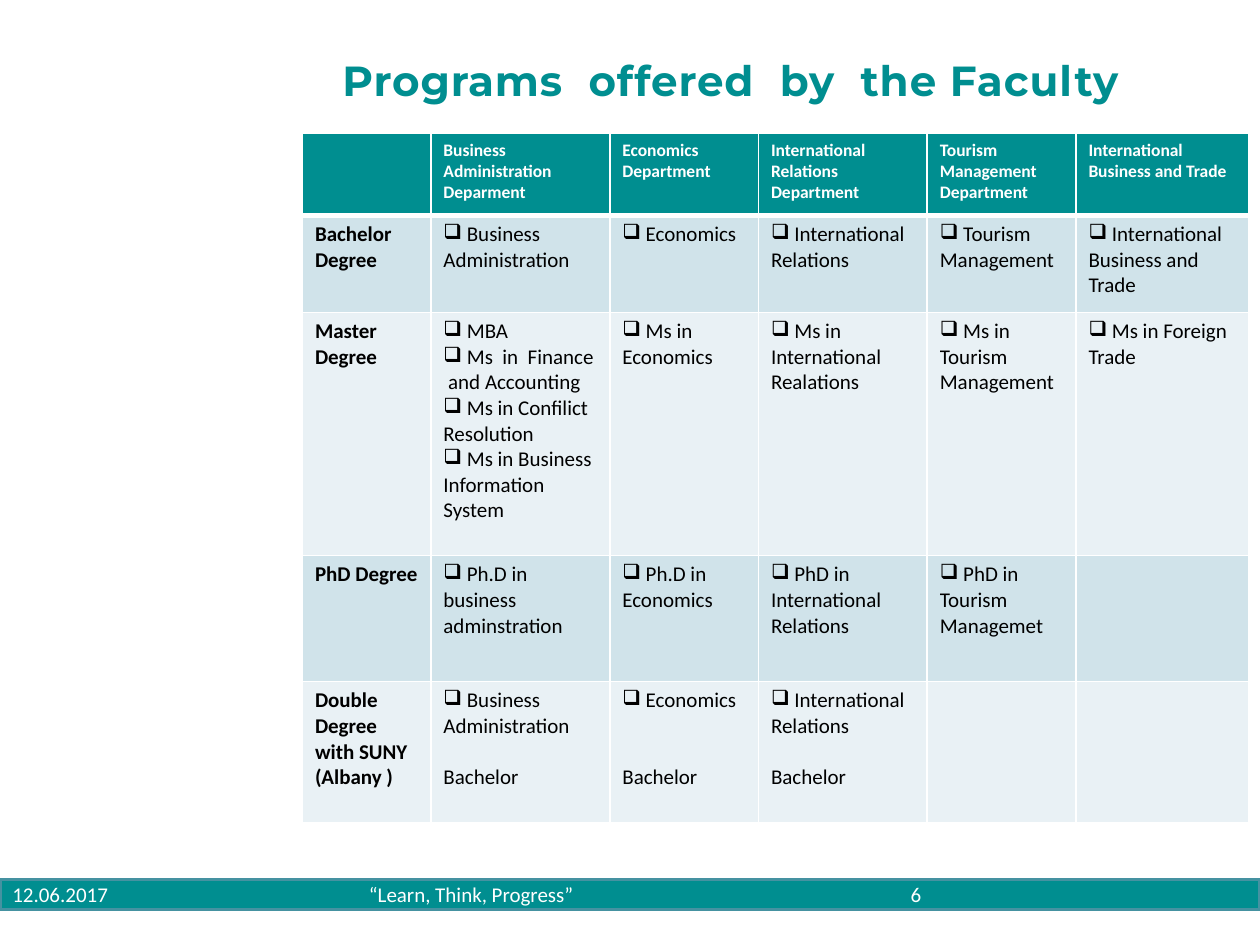
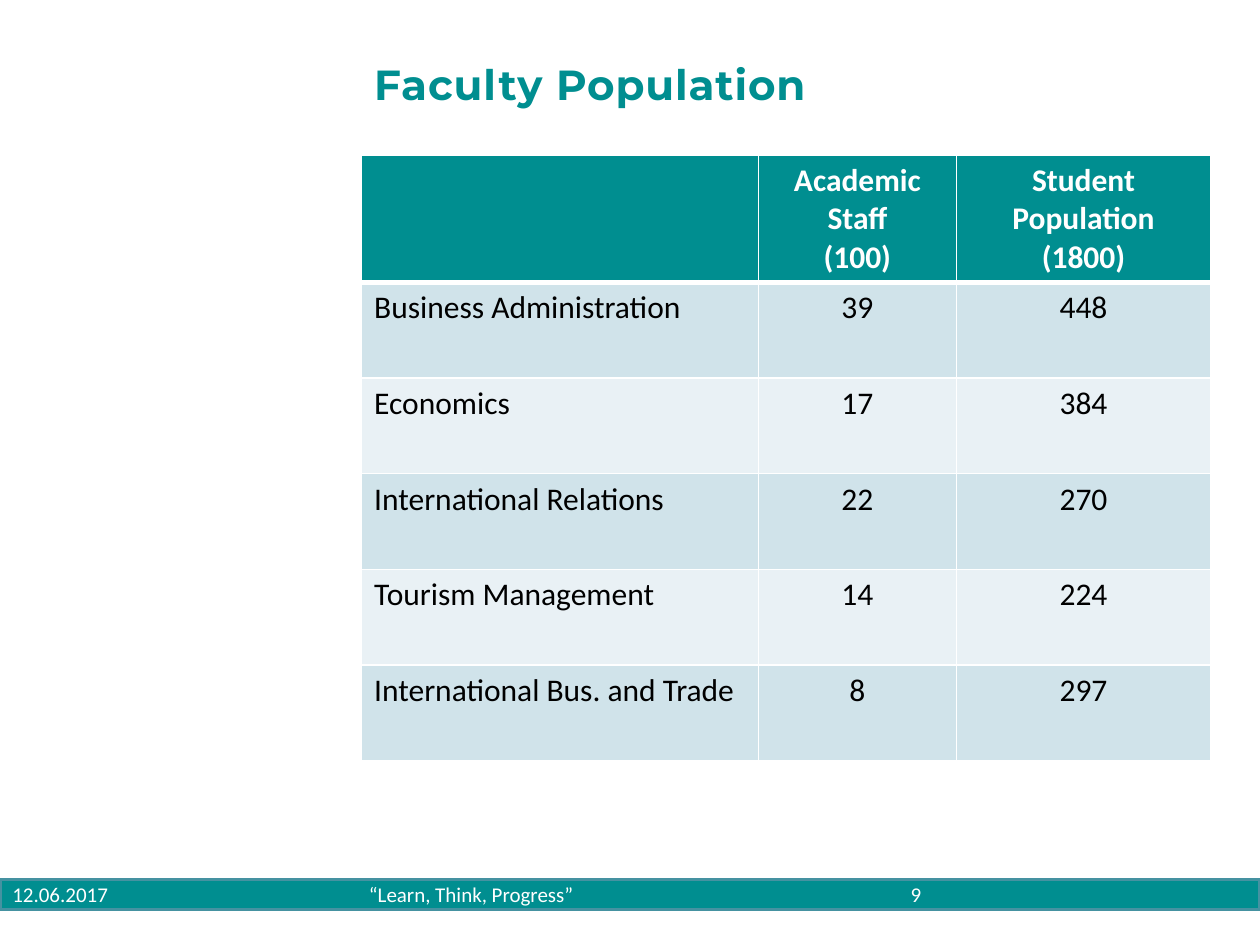
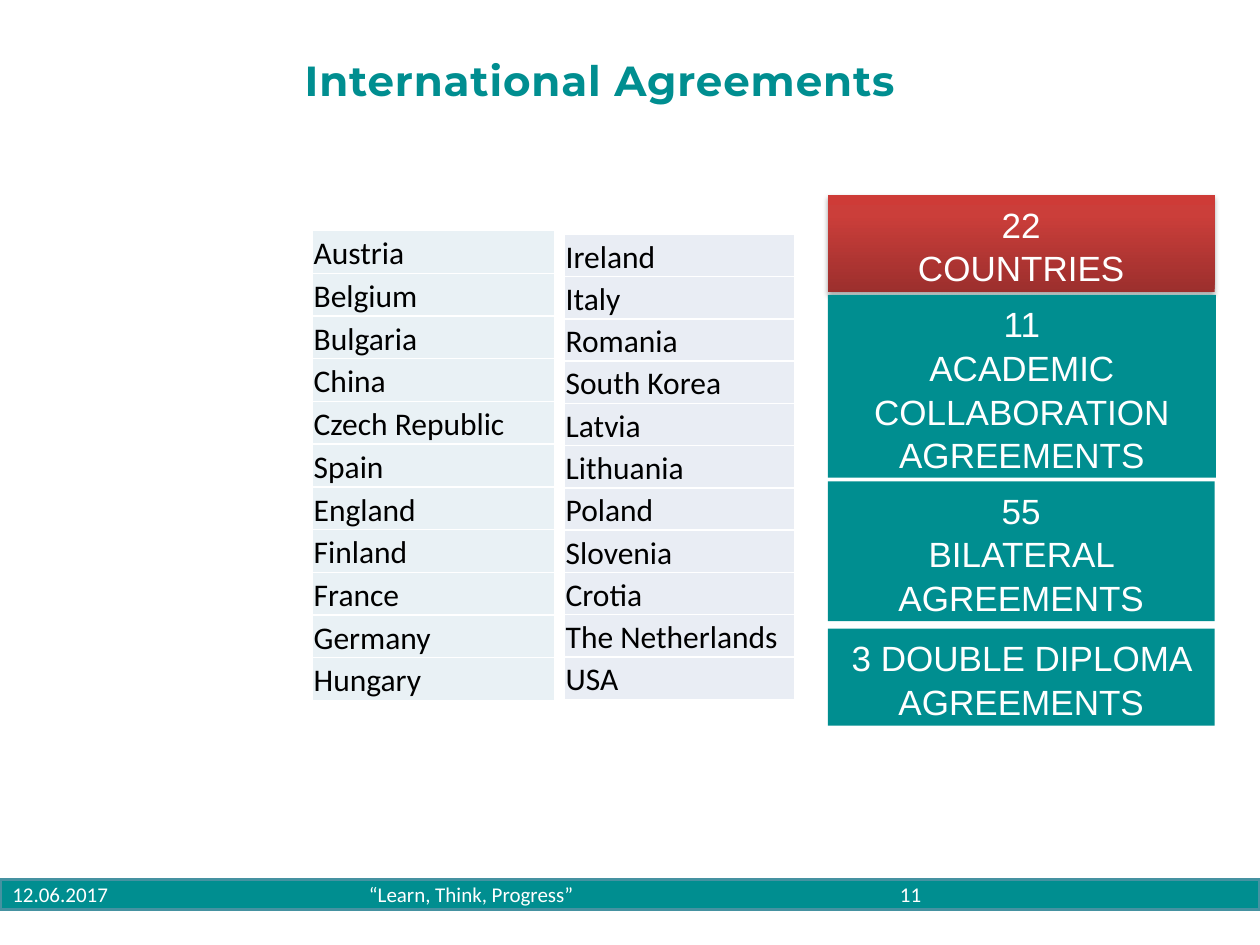
from copy import deepcopy
from dataclasses import dataclass
from typing import Any, NamedTuple

from lxml import etree
from pptx import Presentation
from pptx.dml.color import RGBColor
from pptx.enum.shapes import MSO_SHAPE
from pptx.enum.text import MSO_ANCHOR, PP_ALIGN
from pptx.oxml.ns import qn
from pptx.util import Inches, Pt

LEFT, CENTER, RIGHT = PP_ALIGN.LEFT, PP_ALIGN.CENTER, PP_ALIGN.RIGHT
TOP, MIDDLE, BOTTOM = MSO_ANCHOR.TOP, MSO_ANCHOR.MIDDLE, MSO_ANCHOR.BOTTOM
RECTANGLE = MSO_SHAPE.RECTANGLE


@dataclass(frozen=True)
class Theme:
    teal: str = "008E90"
    band_line: str = "4592A1"
    white: str = "FFFFFF"
    black: str = "000000"
    row_dark: str = "D0E3EA"
    row_light: str = "E9F1F5"
    row_lavender: str = "E9EDF4"
    red_stops: tuple = ((0, "9C2F2D"), (0.8, "CB3E3A"), (1, "CE3B37"))
    body_font: str = "Calibri"
    title_font: str = "Montserrat"
    card_font: str = "Arial"
    title_size: float = 24
    card_size: float = 20
    large_size: float = 18
    body_size: float = 12
    small_size: float = 10


THEME = Theme()


class Box(NamedTuple):
    left: float
    top: float
    width: float
    height: float

    def lengths(self) -> list:
        return [Inches(value) for value in self]


class Style(NamedTuple):
    size: float
    color: str = THEME.black
    bold: bool = False
    font: str = THEME.body_font
    align: Any = LEFT
    line_spacing: Any = None
    tracking: int = 0


class Line(NamedTuple):
    text: str
    bullet: bool = False
    space_before: float = 0


class Title(NamedTuple):
    text: str
    box: Box
    align: Any = LEFT
    anchor: Any = BOTTOM


class Card(NamedTuple):
    box: Box
    lines: list
    highlighted: bool = False


class CellLook(NamedTuple):
    style: Style
    fill: str
    anchor: Any = TOP
    margins: tuple = (0.1, 0.05, 0.1, 0.05)
    top_border: float = 1
    bottom_border: float = 1


def set_values(target: Any, values: dict) -> None:
    for name, value in values.items():
        setattr(target, name, value)


def set_margins(target: Any, margins: tuple) -> None:
    names = ("margin_left", "margin_top", "margin_right", "margin_bottom")
    set_values(target, {name: Inches(value) for name, value in zip(names, margins)})


def fill_solid(fill: Any, color: str) -> None:
    fill.solid()
    fill.fore_color.rgb = RGBColor.from_string(color)


def add_bullet(paragraph: Any) -> None:
    properties = paragraph._p.get_or_add_pPr()
    set_values(paragraph, {"level": 0})
    properties.set("marL", "0")
    properties.set("indent", "0")
    etree.SubElement(properties, qn("a:buChar")).set("char", "❑")


def write_lines(text_frame: Any, lines: list, style: Style) -> None:
    for index, line in enumerate(lines):
        line = Line(line) if isinstance(line, str) else line
        paragraph = text_frame.add_paragraph() if index else text_frame.paragraphs[0]
        set_values(paragraph, {"alignment": style.align, "line_spacing": style.line_spacing})
        if line.space_before:
            paragraph.space_before = Pt(line.space_before)
        if line.bullet:
            add_bullet(paragraph)
        run = paragraph.add_run()
        run.text = f" {line.text}" if line.bullet else line.text
        set_values(run.font, {"size": Pt(style.size), "bold": style.bold, "name": style.font})
        run.font.color.rgb = RGBColor.from_string(style.color)
        if style.tracking:
            run._r.get_or_add_rPr().set("spc", str(style.tracking))


def add_text(slide: Any, box: Box, text: str, style: Style, anchor: Any = MIDDLE) -> None:
    text_frame = slide.shapes.add_textbox(*box.lengths()).text_frame
    set_values(text_frame, {"word_wrap": True, "vertical_anchor": anchor})
    write_lines(text_frame, [text], style)


def add_rectangle(slide: Any, box: Box) -> Any:
    shape = slide.shapes.add_shape(RECTANGLE, *box.lengths())
    shape.shadow.inherit = False
    fill_solid(shape.fill, THEME.teal)
    shape.line.fill.background()
    return shape


def set_borders(cell: Any, top: float, bottom: float) -> None:
    properties = cell._tc.get_or_add_tcPr()
    widths = {"a:lnL": 1, "a:lnR": 1, "a:lnT": top, "a:lnB": bottom}
    for index, (tag, width) in enumerate(widths.items()):
        border = etree.Element(qn(tag), w=str(Pt(width)))
        solid = etree.SubElement(border, qn("a:solidFill"))
        etree.SubElement(solid, qn("a:srgbClr")).set("val", THEME.white)
        properties.insert(index, border)


def format_cell(cell: Any, lines: list, look: CellLook) -> None:
    fill_solid(cell.fill, look.fill)
    set_borders(cell, look.top_border, look.bottom_border)
    cell.vertical_anchor = look.anchor
    set_margins(cell, look.margins)
    write_lines(cell.text_frame, lines, look.style)


def add_grid(slide: Any, left: float, top: float, widths: list, heights: list) -> Any:
    box = Box(left, top, sum(widths), sum(heights))
    table = slide.shapes.add_table(len(heights), len(widths), *box.lengths()).table
    set_values(table, {"first_row": False, "horz_banding": False})
    for column, width in zip(table.columns, widths):
        column.width = Inches(width)
    for row, height in zip(table.rows, heights):
        row.height = Inches(height)
    return table


def fill_banded(table: Any, rows: list, header: Style, label: Style, body: Style) -> None:
    for row_index, row in enumerate(rows):
        for column_index, lines in enumerate(row):
            if row_index == 0:
                look = CellLook(header, THEME.teal, bottom_border=3)
            else:
                look = CellLook(
                    body if column_index else label,
                    THEME.row_dark if row_index % 2 else THEME.row_light,
                    top_border=3 if row_index == 1 else 1,
                )
            format_cell(table.cell(row_index, column_index), lines, look)


def add_country_list(slide: Any, box: Box, countries: list, color: str) -> None:
    heights = [box.height / len(countries)] * len(countries)
    table = add_grid(slide, box.left, box.top, [box.width], heights)
    look = CellLook(Style(THEME.large_size), color, BOTTOM, (0.01, 0.01, 0.01, 0))
    for index, country in enumerate(countries):
        format_cell(table.cell(index, 0), [country], look)


def highlight(shape: Any) -> None:
    shape.fill.gradient()
    shape.fill.gradient_angle = 90
    properties = shape._element.spPr
    stop_list = properties.find(".//" + qn("a:gsLst"))
    stop_list.append(deepcopy(stop_list[0]))
    for stop, (position, color) in zip(shape.fill.gradient_stops, THEME.red_stops):
        stop.position = position
        stop.color.rgb = RGBColor.from_string(color)
    shadow = etree.SubElement(properties.find(qn("a:effectLst")), qn("a:outerShdw"))
    for name, value in {"blurRad": Pt(3.1), "dist": Pt(1.8), "dir": 5400000, "rotWithShape": 0}.items():
        shadow.set(name, str(value))
    color_element = etree.SubElement(shadow, qn("a:srgbClr"), val=THEME.black)
    etree.SubElement(color_element, qn("a:alpha"), val="35000")


def add_card(slide: Any, card: Card) -> None:
    shape = add_rectangle(slide, card.box)
    if card.highlighted:
        highlight(shape)
    set_values(shape.text_frame, {"word_wrap": True, "vertical_anchor": TOP})
    style = Style(THEME.card_size, THEME.white, font=THEME.card_font, align=CENTER, line_spacing=1.04)
    write_lines(shape.text_frame, card.lines, style)


def add_base_slide(presentation: Any, title: Title, number: int) -> Any:
    slide = presentation.slides.add_slide(presentation.slide_layouts[6])
    band = add_rectangle(slide, Box(0, 6.98, 10, 0.24))
    fill_solid(band.line.fill, THEME.band_line)
    band.line.width = Pt(2)
    style = Style(THEME.title_size, THEME.teal, True, THEME.title_font, title.align, tracking=50)
    add_text(slide, title.box, title.text, style, title.anchor)
    footers = (
        (0, 1.3, "12.06.2017", LEFT),
        (6.81, 0.6, str(number), RIGHT),
        (1.38, 4.72, "“Learn, Think, Progress”", CENTER),
    )
    for left, width, text, align in footers:
        add_text(slide, Box(left, 6.9, width, 0.4), text, Style(THEME.body_size, THEME.white, align=align))
    return slide


def bullets(*texts: str) -> list:
    return [Line(text, bullet=True) for text in texts]


def bachelor(program: str, gap: float) -> list:
    return bullets(program) + [Line("Bachelor", space_before=gap)]


def build_programs(presentation: Any) -> None:
    title = Title("Programs  offered  by  the Faculty", Box(2.09, 0.21, 7.42, 0.67), CENTER)
    slide = add_base_slide(presentation, title, 6)
    rows = [
        [
            [],
            ["Business Administration Deparment"],
            ["Economics Department"],
            ["International", "Relations Department"],
            ["Tourism Management Department"],
            ["International Business and Trade"],
        ],
        [
            ["Bachelor Degree"],
            bullets("Business Administration"),
            bullets("Economics"),
            bullets("International Relations"),
            bullets("Tourism Management"),
            bullets("International Business and Trade"),
        ],
        [
            ["Master Degree"],
            bullets(
                "MBA",
                "Ms  in  Finance  and Accounting",
                "Ms in Confilict Resolution",
                "Ms in Business Information System",
            ),
            bullets("Ms in Economics"),
            bullets("Ms in International Realations"),
            bullets("Ms in Tourism Management"),
            bullets("Ms in Foreign Trade"),
        ],
        [
            ["PhD Degree"],
            bullets("Ph.D in business adminstration"),
            bullets("Ph.D in Economics"),
            bullets("PhD in International Relations"),
            bullets("PhD in Tourism Managemet"),
            [],
        ],
        [
            ["Double Degree with SUNY", "(Albany )"],
            bachelor("Business Administration", 14.6),
            bachelor("Economics", 29.2),
            bachelor("International Relations", 14.6),
            [],
            [],
        ],
    ]
    widths = [1.02, 1.42, 1.18, 1.34, 1.18, 1.37]
    table = add_grid(slide, 2.4, 1.06, widths, [0.65, 0.77, 1.93, 1, 1.12])
    header = Style(THEME.small_size, THEME.white, True)
    fill_banded(table, rows, header, Style(THEME.body_size, bold=True), Style(THEME.body_size))


def build_population(presentation: Any) -> None:
    slide = add_base_slide(presentation, Title("Faculty Population", Box(2.87, 0.33, 6.75, 0.58)), 9)
    population = [
        ("Business Administration", 39, 448),
        ("Economics", 17, 384),
        ("International Relations", 22, 270),
        ("Tourism Management", 14, 224),
        ("International Bus. and Trade", 8, 297),
    ]
    rows = [[[], ["Academic Staff", "(100)"], ["Student Population", "(1800)"]]]
    rows += [[[str(value)] for value in record] for record in population]
    table = add_grid(slide, 2.87, 1.23, [3.15, 1.57, 2.02], [1.01] + [0.76] * len(population))
    header = Style(THEME.large_size, THEME.white, True, align=CENTER)
    fill_banded(table, rows, header, Style(THEME.large_size), Style(THEME.large_size, align=CENTER))


def build_agreements(presentation: Any) -> None:
    title = Title("International Agreements", Box(2.32, 0.25, 7.32, 0.77), anchor=MIDDLE)
    slide = add_base_slide(presentation, title, 11)
    first_countries = [
        "Austria", "Belgium", "Bulgaria", "China", "Czech Republic", "Spain",
        "England", "Finland", "France", "Germany", "Hungary",
    ]
    second_countries = [
        "Ireland", "Italy", "Romania", "South Korea", "Latvia", "Lithuania",
        "Poland", "Slovenia", "Crotia", "The Netherlands", "USA",
    ]
    add_country_list(slide, Box(2.48, 1.83, 1.92, 3.73), first_countries, THEME.row_light)
    add_country_list(slide, Box(4.48, 1.86, 1.83, 3.69), second_countries, THEME.row_lavender)
    cards = [
        Card(Box(6.57, 1.55, 3.07, 0.77), ["22", "COUNTRIES"], highlighted=True),
        Card(Box(6.57, 2.34, 3.08, 1.45), ["11", "ACADEMIC COLLABORATION AGREEMENTS"]),
        Card(Box(6.57, 3.82, 3.07, 1.11), ["55", "BILATERAL AGREEMENTS"]),
        Card(Box(6.57, 4.99, 3.07, 0.77), ["3 DOUBLE DIPLOMA AGREEMENTS"]),
    ]
    for card in cards:
        add_card(slide, card)


def main() -> None:
    presentation = Presentation()
    set_values(presentation, {"slide_width": Inches(10), "slide_height": Inches(7.5)})
    build_programs(presentation)
    build_population(presentation)
    build_agreements(presentation)
    presentation.save("out.pptx")


if __name__ == "__main__":
    main()
